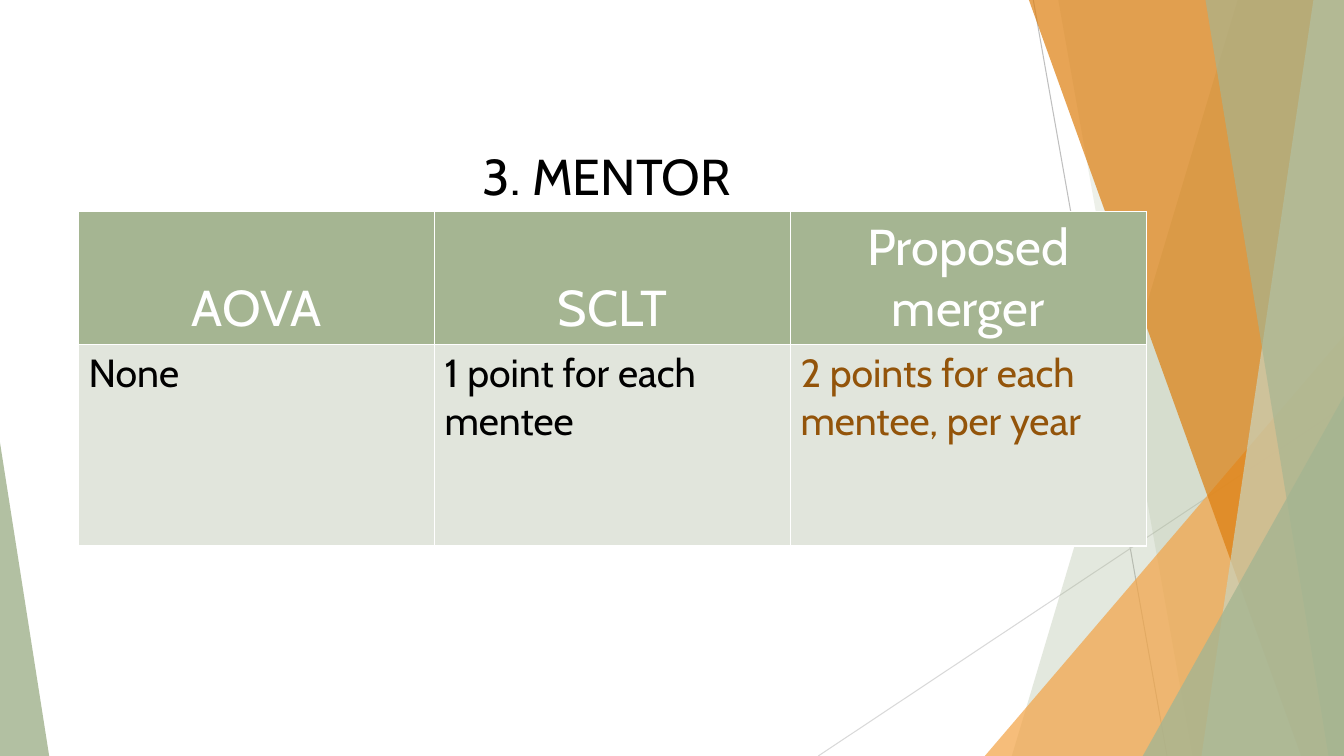
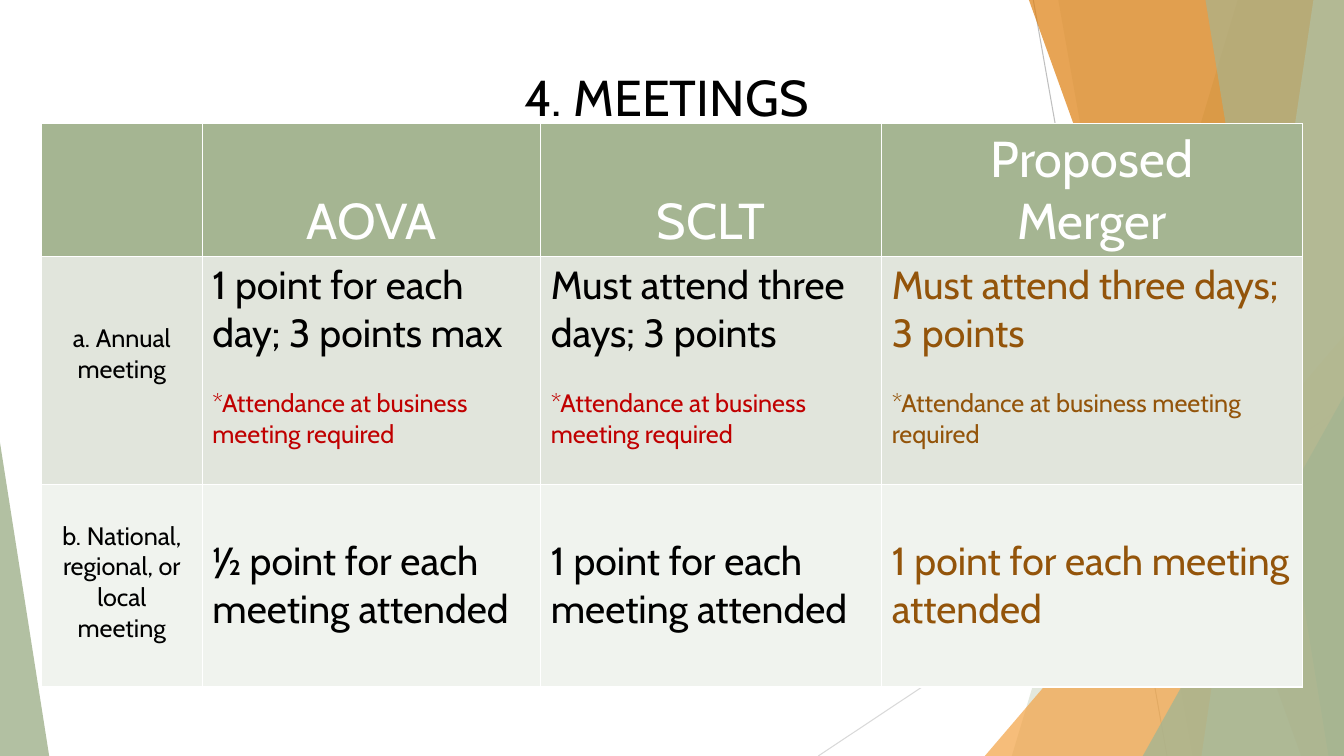
from lxml import etree
from pptx import Presentation
from pptx.dml.color import RGBColor
from pptx.enum.shapes import MSO_CONNECTOR, MSO_SHAPE
from pptx.enum.text import MSO_ANCHOR, MSO_AUTO_SIZE, PP_ALIGN
from pptx.oxml.ns import qn
from pptx.util import Cm, Pt

FONT = "Cabin"
WIDTH, HEIGHT = 33.87, 19.05
COLOURS = {
    "sage": "A5B592", "pale sage": "C9D3BE", "orange": "F3A447", "dark orange": "DD7E0E",
    "band": "E1E5DC", "light band": "F0F3EE", "white": "FFFFFF", "black": "000000",
    "brown": "93540A", "red": "C00000", "grey": "BFBFBF", "light grey": "D9D9D9",
}

# Text styles: size, colour, alignment, space before
STYLES = {
    "title": (36, "black", PP_ALIGN.CENTER, 0),
    "header": (36, "white", PP_ALIGN.CENTER, 0),
    "label": (18, "black", PP_ALIGN.CENTER, 0),
    "body": (28, "black", PP_ALIGN.LEFT, 0),
    "proposed": (28, "brown", PP_ALIGN.LEFT, 0),
    "note": (18, "red", PP_ALIGN.LEFT, 22),
    "proposed note": (18, "brown", PP_ALIGN.LEFT, 22),
}

# Background, back to front; lengths in cm
LINES = [
    ((26.04, 0), (29.41, HEIGHT), "grey"),
    ((WIDTH, 10.24), (20.62, HEIGHT), "light grey"),
]
# strip: x at top, x at bottom (fills to the right edge)
# triangle: left, top, width, apex (stands on the bottom edge)
FACETS = [
    ("strip", (31.19, 25.5), "sage", 30),
    ("strip", (26.67, 30.05), "sage", 20),
    ("triangle", (24.82, 8.46, 9.05, 1), "orange", 72),
    ("strip", (25.93, 32.79), "dark orange", 70),
    ("strip", (33.1, 30.28), "pale sage", 70),
    ("strip", (30.38, 33.48), "sage", 65),
    ("triangle", (28.8, 9.98, 5.07, 1), "sage", 80),
    ("triangle", (0, 11.15, 1.24, 0), "sage", 85),
]

TITLE_SIZE = (26.92, 1.8)
HEADER_HEIGHT = 3.35
CELL_TOP = 0.13
NOTE = "*Attendance at business meeting required"

# Each cell is a list of (text, style); tops are the cells' upper margins
SLIDES = [
    {
        "title": "3. MENTOR ", "title at": (1.98, 3.53), "table at": (1.98, 5.33),
        "columns": [8.97] * 3,
        "headers": [["AOVA"], ["SCLT"], ["Proposed", "merger"]],
        "rows": [
            {"height": 5.08, "fill": "band", "tops": [CELL_TOP] * 3, "cells": [
                [("None", "body")],
                [("1 point for each mentee", "body")],
                [("2 points for each mentee, per year", "proposed")],
            ]},
        ],
    },
    {
        "title": "4. MEETINGS ", "title at": (3.48, 1.55), "table at": (1.04, 3.12),
        "columns": [4.06, 8.53, 8.59, 10.6],
        "headers": [[], ["AOVA"], ["SCLT"], ["Proposed", "Merger"]],
        "rows": [
            {"height": 5.74, "fill": "band", "tops": [1.68] + [CELL_TOP] * 3, "cells": [
                [("a. Annual meeting", "label")],
                [("1 point for each day; 3 points max", "body"), (NOTE, "note")],
                [("Must attend three days; 3 points", "body"), (NOTE, "note")],
                [("Must attend three days; 3 points", "proposed"), (NOTE, "proposed note")],
            ]},
            {"height": 5.1, "fill": "light band", "tops": [0.91] + [1.34] * 3, "cells": [
                [("b. National, regional, or local meeting", "label")],
                [("½ point for each meeting attended", "body")],
                [("1 point for each meeting attended", "body")],
                [("1 point for each meeting attended", "proposed")],
            ]},
        ],
    },
]


def colour(name):
    return RGBColor.from_string(COLOURS[name])


def write(frame, paragraphs):
    for index, (text, style) in enumerate(paragraphs):
        size, ink, alignment, gap = STYLES[style]
        para = frame.add_paragraph() if index else frame.paragraphs[0]
        para.alignment = alignment
        para.space_before = Pt(gap)
        span = para.add_run()
        span.text = text
        span.font.name = FONT
        span.font.size = Pt(size)
        span.font.color.rgb = colour(ink)


def add_line(page, start, end, ink):
    line = page.shapes.add_connector(
        MSO_CONNECTOR.STRAIGHT, *(Cm(value) for value in start + end))
    line.line.color.rgb = colour(ink)
    line.line.width = Pt(0.75)
    etree.SubElement(line._element.spPr, qn("a:effectLst"))


def add_facet(page, kind, geometry, ink, opacity):
    if kind == "strip":
        top_x, bottom_x = geometry
        builder = page.shapes.build_freeform(Cm(top_x), 0)
        corners = [(WIDTH, 0), (WIDTH, HEIGHT), (bottom_x, HEIGHT)]
        builder.add_line_segments([(Cm(x), Cm(y)) for x, y in corners], close=True)
        shape = builder.convert_to_shape()
    else:
        left, top, width, apex = geometry
        shape = page.shapes.add_shape(
            MSO_SHAPE.ISOSCELES_TRIANGLE, Cm(left), Cm(top), Cm(width), Cm(HEIGHT - top))
        shape.adjustments[0] = apex
    shape.shadow.inherit = False
    shape.line.fill.background()
    shape.fill.solid()
    shape.fill.fore_color.rgb = colour(ink)
    tint = shape._element.spPr.find(qn("a:solidFill")).find(qn("a:srgbClr"))
    etree.SubElement(tint, qn("a:alpha"), val=str(opacity * 1000))


def add_title(page, text, position):
    box = page.shapes.add_textbox(*(Cm(value) for value in position + TITLE_SIZE))
    frame = box.text_frame
    frame.word_wrap = True
    frame.auto_size = MSO_AUTO_SIZE.SHAPE_TO_FIT_TEXT
    write(frame, [(text, "title")])


def style_cell(cell, fill):
    """Give the cell thin white borders and a plain fill."""
    properties = cell._tc.get_or_add_tcPr()
    for side in "LRTB":
        border = etree.SubElement(properties, qn(f"a:ln{side}"), w=str(Pt(1)))
        solid = etree.SubElement(border, qn("a:solidFill"))
        etree.SubElement(solid, qn("a:srgbClr"), val=COLOURS["white"])
    cell.fill.solid()
    cell.fill.fore_color.rgb = colour(fill)


def add_comparison(page, content):
    columns = content["columns"]
    header = {
        "height": HEADER_HEIGHT, "fill": "sage", "tops": [CELL_TOP] * len(columns),
        "cells": [[(text, "header") for text in lines] for lines in content["headers"]],
    }
    rows = [header] + content["rows"]
    left, top = content["table at"]
    height = sum(row["height"] for row in rows)
    table = page.shapes.add_table(
        len(rows), len(columns), Cm(left), Cm(top), Cm(sum(columns)), Cm(height)).table
    table.first_row = table.horz_banding = False
    for column, width in zip(table.columns, columns):
        column.width = Cm(width)
    for row_index, row in enumerate(rows):
        table.rows[row_index].height = Cm(row["height"])
        for column_index, paragraphs in enumerate(row["cells"]):
            cell = table.cell(row_index, column_index)
            style_cell(cell, row["fill"])
            cell.margin_top = Cm(row["tops"][column_index])
            cell.vertical_anchor = MSO_ANCHOR.TOP if row_index else MSO_ANCHOR.BOTTOM
            write(cell.text_frame, paragraphs)


def main():
    deck = Presentation()
    deck.slide_width, deck.slide_height = Cm(WIDTH), Cm(HEIGHT)
    for content in SLIDES:
        page = deck.slides.add_slide(deck.slide_layouts[6])
        for line in LINES:
            add_line(page, *line)
        for facet in FACETS:
            add_facet(page, *facet)
        add_comparison(page, content)
        add_title(page, content["title"], content["title at"])
    deck.save("out.pptx")


if __name__ == "__main__":
    main()
